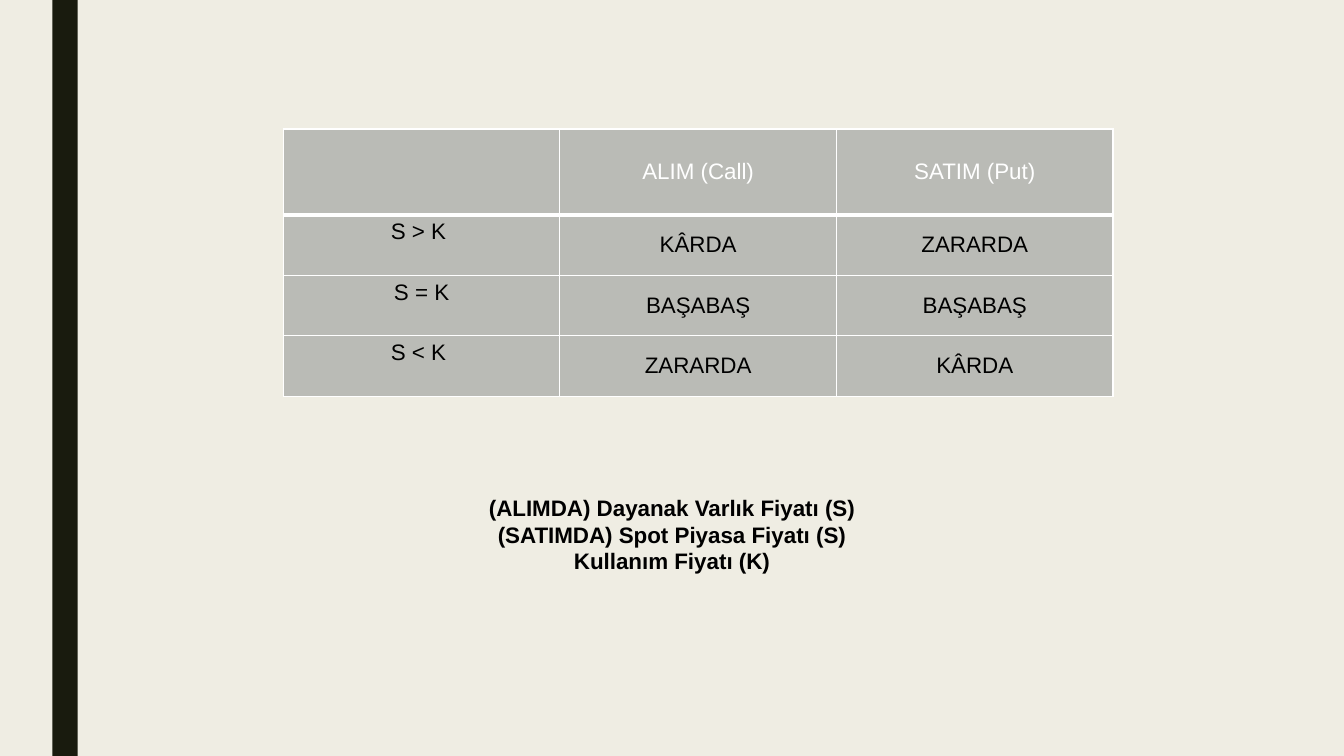
from lxml import etree
from pptx import Presentation
from pptx.dml.color import RGBColor
from pptx.enum import shapes, text
from pptx.oxml.ns import qn
from pptx.util import Inches, Pt

CREAM = RGBColor(0xEF, 0xED, 0xE3)
DARK = RGBColor(0x19, 0x1B, 0x0E)
GREY = RGBColor(0xBA, 0xBB, 0xB6)
WHITE = RGBColor(0xFF, 0xFF, 0xFF)
BLACK = RGBColor(0, 0, 0)

PAYOFFS = [
    ["", "ALIM (Call)", "SATIM (Put)"],
    ["S > K ", "KÂRDA", "ZARARDA"],
    ["S = K", "BAŞABAŞ", "BAŞABAŞ"],
    ["S < K ", "ZARARDA", "KÂRDA"],
]
LEGEND = [
    "(ALIMDA) Dayanak Varlık Fiyatı (S)",
    "(SATIMDA) Spot Piyasa Fiyatı (S)",
    "Kullanım Fiyatı (K)",
]


def format_paragraph(p, color, bold=False):
    p.alignment = text.PP_ALIGN.CENTER
    p.font.name = "Arial"
    p.font.size = Pt(16)
    p.font.bold = bold
    p.font.color.rgb = color


def set_borders(cell, top=1, bottom=1):
    """Draw white borders; widths are in points."""
    tcPr = cell._tc.get_or_add_tcPr()
    widths = {"a:lnL": 1, "a:lnR": 1, "a:lnT": top, "a:lnB": bottom}
    for i, (tag, width) in enumerate(widths.items()):
        ln = etree.Element(qn(tag), w=str(Pt(width)))
        fill = etree.SubElement(ln, qn("a:solidFill"))
        etree.SubElement(fill, qn("a:srgbClr"), val=str(WHITE))
        tcPr.insert(i, ln)


def add_side_bar(s, left, top, width, height):
    sp = s.shapes.add_shape(shapes.MSO_SHAPE.RECTANGLE, left, top, width, height)
    sp.shadow.inherit = False
    sp.fill.solid()
    sp.fill.fore_color.rgb = DARK
    sp.line.fill.background()


def add_payoff_table(s, left, top, width, header_height, row_height):
    rows, cols = len(PAYOFFS), len(PAYOFFS[0])
    height = header_height + row_height * (rows - 1)
    table = s.shapes.add_table(rows, cols, left, top, width, height).table
    table.first_row = table.horz_banding = False
    for col in table.columns:
        col.width = width // cols
    for i, values in enumerate(PAYOFFS):
        table.rows[i].height = row_height if i else header_height
        for j, value in enumerate(values):
            cell = table.cell(i, j)
            cell.text = value
            cell.vertical_anchor = text.MSO_ANCHOR.MIDDLE if j else text.MSO_ANCHOR.TOP
            cell.fill.solid()
            cell.fill.fore_color.rgb = GREY
            format_paragraph(cell.text_frame.paragraphs[0], BLACK if i else WHITE)
            set_borders(cell, top=3 if i == 1 else 1, bottom=1 if i else 3)


def add_legend(s, left, top, width, height):
    tf = s.shapes.add_textbox(left, top, width, height).text_frame
    tf.word_wrap = True
    tf.text = "\n".join(LEGEND)
    for p in tf.paragraphs:
        format_paragraph(p, BLACK, bold=True)


def main():
    prs = Presentation()
    prs.slide_width, prs.slide_height = Inches(13.33), Inches(7.5)
    s = prs.slides.add_slide(prs.slide_layouts[6])
    s.background.fill.solid()
    s.background.fill.fore_color.rgb = CREAM
    add_side_bar(s, Inches(0.52), 0, Inches(0.25), prs.slide_height)
    add_payoff_table(s, Inches(2.81), Inches(1.28), Inches(8.23), Inches(0.85), Inches(0.6))
    add_legend(s, Inches(4.57), Inches(4.85), Inches(4.19), Inches(1.18))
    prs.save("out.pptx")


if __name__ == "__main__":
    main()
